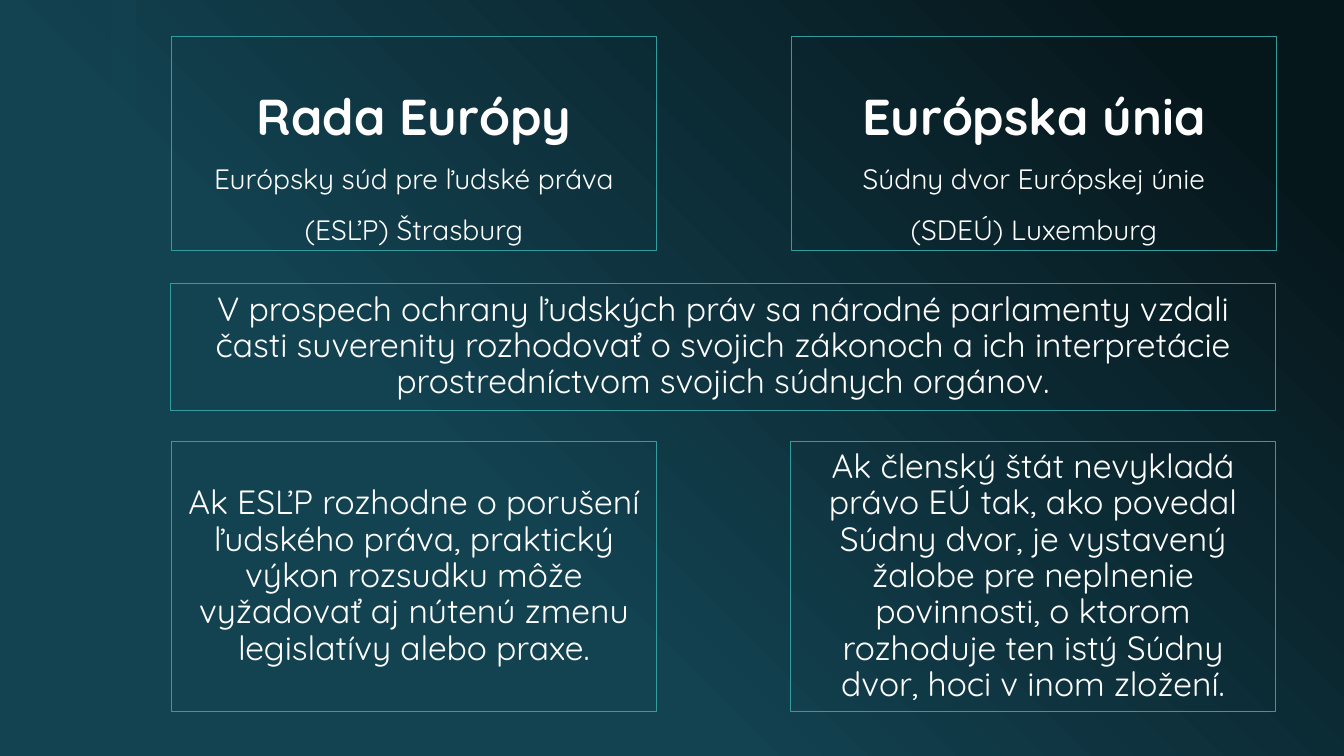
from dataclasses import dataclass

from lxml import etree
from pptx import Presentation
from pptx import util as u
from pptx.dml.color import RGBColor
from pptx.enum import shapes, text
from pptx.oxml.ns import qn

COLORS = {"night": "06171C", "petrol": "134251", "teal": "339C9F", "white": "FFFFFF"}
FONT = "Quicksand"
LEFT, RIGHT, COLUMN_WIDTH = 1.7, 7.84, 4.81

HEADING_FORMAT = {"line_spacing": 1.5, "space_after": u.Pt(6)}
BODY_FORMAT = {"line_spacing": 0.9}


@dataclass(frozen=True)
class Line:
    words: str
    size: int = 24
    bold: bool = False


@dataclass(frozen=True)
class Panel:
    left: float
    top: float
    width: float
    height: float
    lines: tuple[Line, ...]
    is_heading: bool = False


def institution(left: float, name: str, court: str, seat: str) -> Panel:
    """Describe a top panel: an organisation with its court."""
    lines = (Line(name, 36, True), Line(court, 20), Line(seat, 20))
    return Panel(left, 0.36, COLUMN_WIDTH, 2.13, lines, True)


def consequence(left: float, words: str) -> Panel:
    """Describe a bottom panel: what follows from a ruling."""
    return Panel(left, 4.38, COLUMN_WIDTH, 2.68, (Line(words),))


PANELS = (
    institution(LEFT, "Rada Európy", "Európsky súd pre ľudské práva", "(ESĽP) Štrasburg"),
    institution(7.85, "Európska únia", "Súdny dvor Európskej únie", "(SDEÚ) Luxemburg"),
    Panel(1.69, 2.81, 10.96, 1.26, (Line(
        "V prospech ochrany ľudských práv sa národné parlamenty vzdali časti "
        "suverenity rozhodovať o svojich zákonoch a ich interpretácie "
        "prostredníctvom svojich súdnych orgánov."),)),
    consequence(LEFT, "Ak ESĽP rozhodne o porušení ľudského práva, praktický výkon "
                "rozsudku môže vyžadovať aj nútenú zmenu legislatívy alebo praxe."),
    consequence(RIGHT, "Ak členský štát nevykladá právo EÚ tak, ako povedal Súdny dvor, "
                "je vystavený žalobe pre neplnenie povinnosti, o ktorom rozhoduje "
                "ten istý Súdny dvor, hoci v inom zložení."),
)


def color(name: str) -> RGBColor:
    return RGBColor.from_string(COLORS[name])


def add_rectangle(slide, left: float, top: float, width: float, height: float):
    rectangle = slide.shapes.add_shape(
        shapes.MSO_SHAPE.RECTANGLE,
        *(u.Inches(length) for length in (left, top, width, height)))
    rectangle.shadow.inherit = False
    return rectangle


def paint_background(slide) -> None:
    fill = slide.background.fill
    fill.gradient()
    fill.gradient_angle = 225
    for stop, (position, name) in zip(fill.gradient_stops, ((0.1, "night"), (0.65, "petrol"))):
        stop.position = position
        stop.color.rgb = color(name)


def add_side_band(slide) -> None:
    band = add_rectangle(slide, 1.1, 0, 0.25, 7.5)
    band.fill.solid()
    band.fill.fore_color.rgb = color("petrol")
    band.line.fill.background()
    tint = band.fill._xPr.find(f".//{qn('a:srgbClr')}")
    etree.SubElement(tint, qn("a:alpha"), val="60000")


def add_panel(slide, panel: Panel) -> None:
    box = add_rectangle(slide, panel.left, panel.top, panel.width, panel.height)
    box.fill.background()
    box.line.color.rgb = color("teal")
    box.line.width = u.Pt(0.75)

    frame = box.text_frame
    frame.word_wrap = True
    anchor = text.MSO_ANCHOR
    frame.vertical_anchor = anchor.BOTTOM if panel.is_heading else anchor.MIDDLE
    paragraph = frame.paragraphs[0]
    paragraph.alignment = text.PP_ALIGN.CENTER
    paragraph_format = HEADING_FORMAT if panel.is_heading else BODY_FORMAT
    for attribute, value in paragraph_format.items():
        setattr(paragraph, attribute, value)

    for index, line in enumerate(panel.lines):
        if index:
            paragraph.add_line_break()
        run = paragraph.add_run()
        run.text = line.words
        run_format = {"name": FONT, "size": u.Pt(line.size), "bold": line.bold}
        for attribute, value in run_format.items():
            setattr(run.font, attribute, value)
        run.font.color.rgb = color("white")


def main() -> None:
    deck = Presentation()
    deck.slide_width, deck.slide_height = u.Inches(13.33), u.Inches(7.5)
    slide = deck.slides.add_slide(deck.slide_layouts[6])
    paint_background(slide)
    add_side_band(slide)
    for panel in PANELS:
        add_panel(slide, panel)
    deck.save("out.pptx")


if __name__ == "__main__":
    main()
